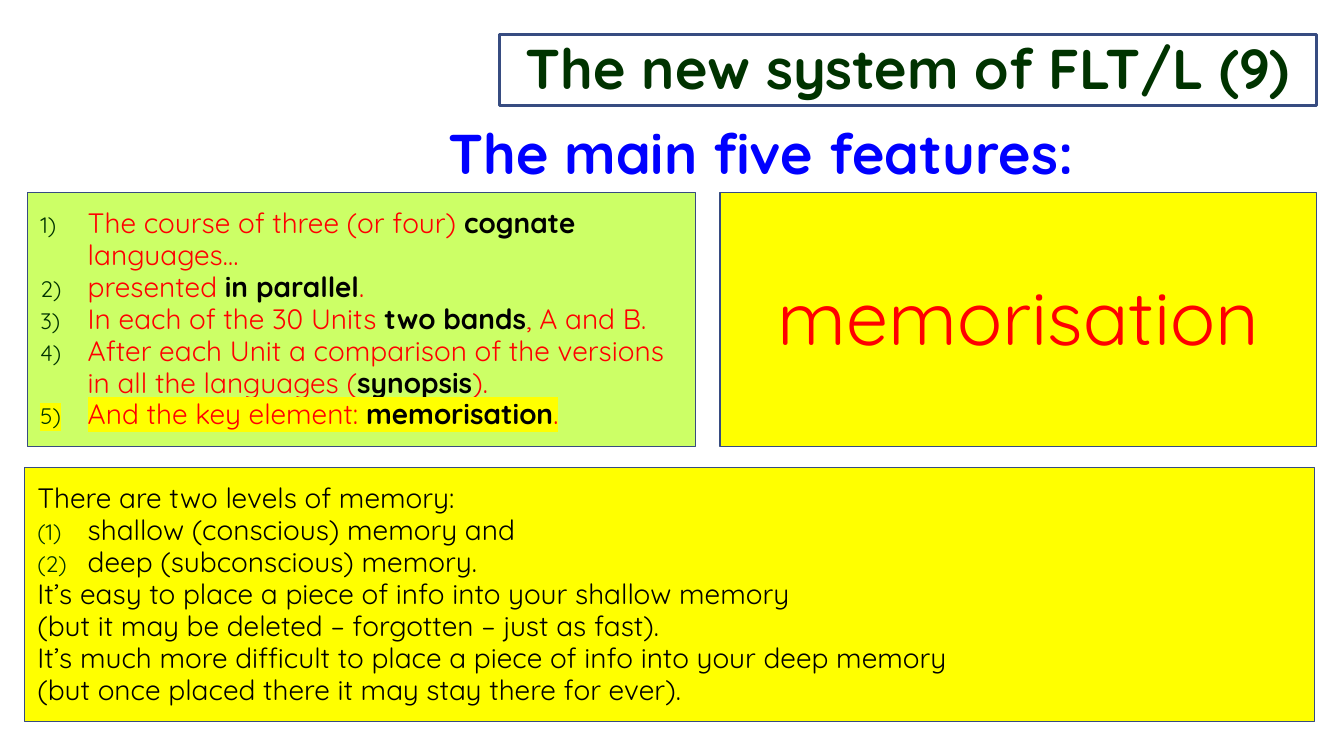
"""Build the slide on the five features of the new system, with memorisation as the key one."""
from lxml.etree import SubElement
from pptx import Presentation
from pptx.dml.color import RGBColor as RGB
from pptx.enum.shapes import MSO_SHAPE as SHAPE
from pptx.enum.text import MSO_ANCHOR as ANCHOR, MSO_AUTO_SIZE as FIT, PP_ALIGN as ALIGN
from pptx.oxml.ns import qn
from pptx.util import Inches, Pt

TITLE = "The new system of FLT/L (9)"
SUBTITLE = "The main five features:"
KEYWORD = "memorisation"
FEATURES = [
    "The course of three (or four) **cognate **languages…",
    "presented **in parallel**.",
    "In each of the 30 Units **two bands**, A and B.",
    "After each Unit a comparison of the versions in all the languages (**synopsis**).",
    "And the key element: **memorisation**.",
]
MEMORY = [
    "There are two levels of memory:",
    "shallow (conscious) memory and",
    "deep (subconscious) memory.",
    "It’s easy to place a piece of info into your shallow memory",
    "(but it may be deleted – forgotten – just as fast).",
    "It’s much more difficult to place a piece of info into your deep memory",
    "(but once placed there it may stay there for ever).",
]
MEMORY_NUMBERED = (1, 2)

COLORS = {"title": "003300", "subtitle": "0000FF", "text": "000000", "accent": "FF0000",
          "number": "003300", "edge": "374C81", "yellow": "FFFF00", "green": "CCFF66"}
FONT = "Quicksand"
WIDTH, HEIGHT = 13.33, 7.5
RIGHT = 13.06
PANEL_TOP, PANEL_H = 1.91, 2.52
BOXES = {
    "title": (4.95, 0.34, RIGHT - 4.95, 0.71),
    "subtitle": (4.32, 1.07, RIGHT - 4.32, 0.94),
    "features": (0.27, PANEL_TOP, 6.63, PANEL_H),
    "keyword": (7.14, PANEL_TOP, RIGHT - 7.14, PANEL_H),
    "memory": (0.24, 4.64, 12.8, PANEL_H),
}


def rgb(name):
    return RGB.from_string(COLORS[name])


def place(sp, box, fill=None, line=None):
    sp.left, sp.top, sp.width, sp.height = (Inches(v) for v in BOXES[box])
    if fill:
        sp.fill.solid()
        sp.fill.fore_color.rgb = rgb(fill)
    else:
        sp.fill.background()
    if line:
        sp.line.color.rgb = rgb("edge")
        sp.line.width = Pt(line)
    tf = sp.text_frame
    tf.auto_size = FIT.NONE
    tf.word_wrap = True
    tf.vertical_anchor = ANCHOR.MIDDLE
    tf.margin_left = tf.margin_right = Inches(0.13)
    tf.margin_top = tf.margin_bottom = Inches(0.07)
    return tf


def set_marker(p, scheme=None, indent=0):
    pPr = p._p.get_or_add_pPr()
    pPr.set("marL", str(Inches(indent)))
    pPr.set("indent", str(-Inches(indent)))
    if scheme:
        SubElement(SubElement(pPr, qn("a:buClr")), qn("a:srgbClr"), val=COLORS["number"])
        SubElement(pPr, qn("a:buSzPct"), val="80000")
        SubElement(pPr, qn("a:buFont"), typeface=FONT)
        SubElement(pPr, qn("a:buAutoNum"), type=scheme)
    else:
        SubElement(pPr, qn("a:buNone"))


def write(p, text, size, color, bold=False, align=ALIGN.LEFT, highlight=None):
    p.alignment = align
    p.line_spacing = 0.95
    p.space_before = p.space_after = Pt(0)
    for i, part in enumerate(text.split("**")):
        strong = i % 2 == 1
        r = p.add_run()
        r.text = part
        r.font.size = Pt(size)
        r.font.name = FONT
        r.font.bold = bold or strong
        r.font.color.rgb = rgb("text" if strong else color)
        if highlight:
            rPr = r._r.get_or_add_rPr()
            mark = SubElement(rPr, qn("a:highlight"))
            SubElement(mark, qn("a:srgbClr"), val=COLORS[highlight])
            rPr.find(qn("a:solidFill")).addnext(mark)


def paragraphs(tf, lines):
    for i, line in enumerate(lines):
        yield i, tf.paragraphs[0] if i == 0 else tf.add_paragraph(), line


def main():
    prs = Presentation()
    prs.slide_width, prs.slide_height = Inches(WIDTH), Inches(HEIGHT)
    slide = prs.slides.add_slide(prs.slide_layouts[3])
    title, features, memory = list(slide.placeholders)[:3]

    tf = place(title, "title", line=2.25)
    write(tf.paragraphs[0], TITLE, 40, "title", bold=True, align=ALIGN.CENTER)

    subtitle = slide.shapes.add_textbox(0, 0, 0, 0)
    tf = place(subtitle, "subtitle")
    write(tf.paragraphs[0], SUBTITLE, 40, "subtitle", bold=True)

    tf = place(features, "features", "green", 1)
    for i, p, line in paragraphs(tf, FEATURES):
        set_marker(p, "arabicParenR", 0.47)
        write(p, line, 20, "accent", highlight="yellow" if i == len(FEATURES) - 1 else None)

    keyword = slide.shapes.add_shape(SHAPE.RECTANGLE, 0, 0, 0, 0)
    keyword.shadow.inherit = False
    tf = place(keyword, "keyword", "yellow", 1)
    write(tf.paragraphs[0], KEYWORD, 54, "accent", align=ALIGN.CENTER)

    tf = place(memory, "memory", "yellow", 1)
    for i, p, line in paragraphs(tf, MEMORY):
        if i in MEMORY_NUMBERED:
            set_marker(p, "arabicParenBoth", 0.5)
        else:
            set_marker(p)
        write(p, line, 20, "text")

    prs.save("out.pptx")


if __name__ == "__main__":
    main()
